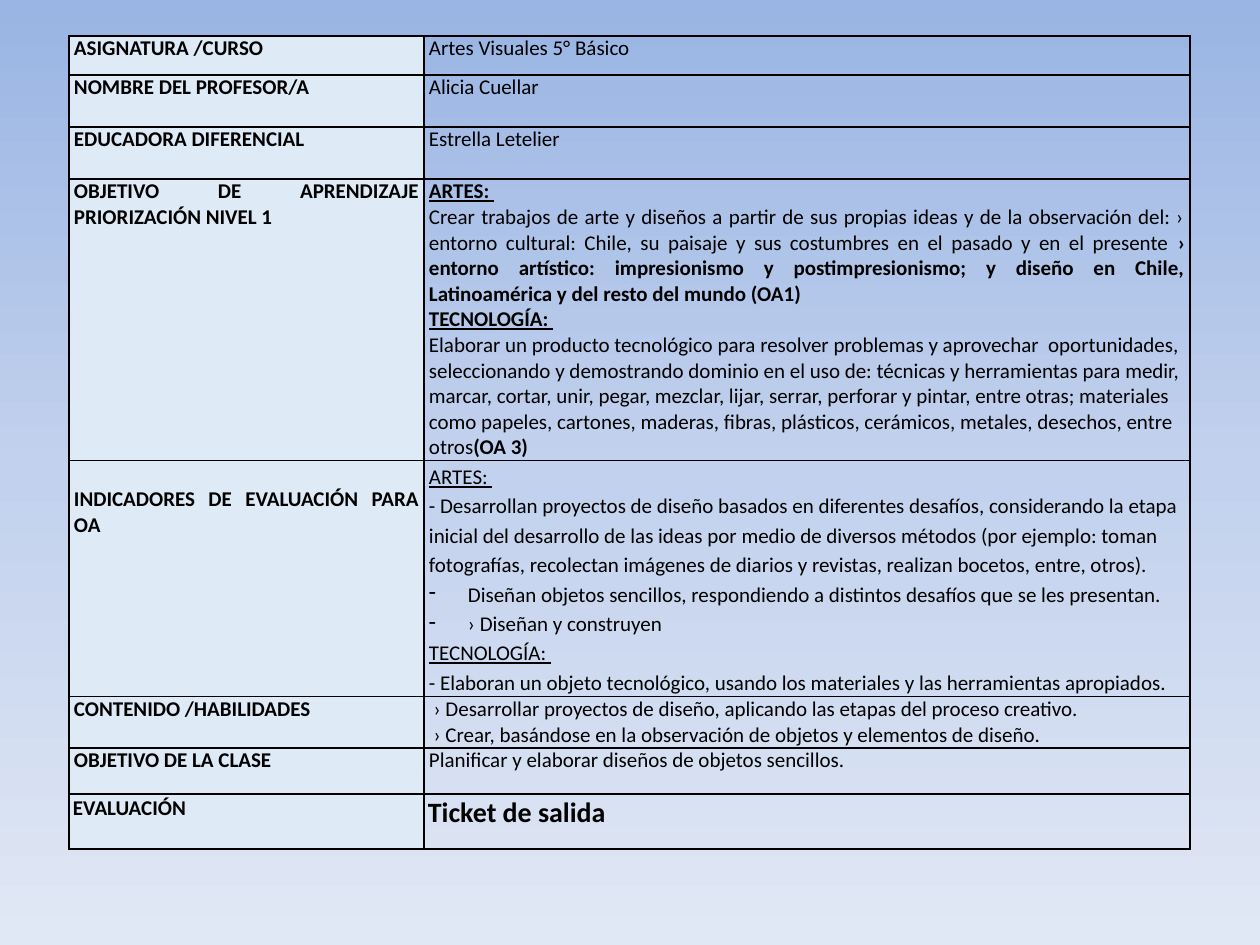
from copy import deepcopy

from lxml.etree import SubElement
from pptx import Presentation
from pptx.dml.color import RGBColor
from pptx.enum.text import PP_ALIGN as Align, MSO_ANCHOR as Anchor
from pptx.oxml import parse_xml
from pptx.oxml.ns import nsdecls, qn
from pptx.util import Pt

PX = 914400 // 126
COLORS = {"ink": "000000", "label": "DEEAF6",
          "sky top": "9AB5E4", "sky middle": "C2D1ED", "sky bottom": "E1E8F5"}
LINE = 26  # height of one text line, px


def add_para(frame, spans, size=12, align=Align.JUSTIFY, spacing=None, dash=False):
    """Add a paragraph of (text, style) spans; style holds b for bold, u for underline."""
    first = frame.paragraphs[0]
    para = frame.add_paragraph() if first.runs else first
    para.alignment = align
    if spacing:
        para.line_spacing = spacing
    if dash:
        props = para._p.get_or_add_pPr()
        props.set("marL", str(39 * PX))
        props.set("indent", str(-39 * PX))
        SubElement(props, qn("a:buChar")).set("char", "-")
    for text, style in spans:
        span = para.add_run()
        span.text = text
        span.font.name = "Calibri"
        span.font.size = Pt(size)
        span.font.bold = "b" in style
        span.font.underline = "u" in style
        span.font.color.rgb = RGBColor.from_string(COLORS["ink"])


def style_cell(cell, side, top):
    cell.margin_left = cell.margin_right = side * PX
    cell.margin_top, cell.margin_bottom = top * PX, 0
    cell.vertical_anchor = Anchor.TOP
    props = cell._tc.get_or_add_tcPr()
    for place, edge in enumerate("LRTB"):
        props.insert(place, parse_xml(
            f'<a:ln{edge} {nsdecls("a")} w="12700"><a:solidFill>'
            f'<a:srgbClr val="{COLORS["ink"]}"/></a:solidFill></a:ln{edge}>'))


LEFT = {"align": Align.LEFT}
LOOSE = {"align": Align.LEFT, "spacing": 1.15}
DASHED = {**LOOSE, "dash": True}

# Each row: label, height in px, paragraphs as (spans, format)
ROWS = [
    ("ASIGNATURA /CURSO", 39, [([("Artes Visuales 5° Básico", "")], {})]),
    ("NOMBRE DEL PROFESOR/A", 52, [([("Alicia Cuellar", "")], {})]),
    ("EDUCADORA DIFERENCIAL", 52, [([("Estrella Letelier", "")], {})]),
    ("OBJETIVO DE APRENDIZAJE PRIORIZACIÓN NIVEL 1", 281, [
        ([("ARTES: ", "bu")], {}),
        ([("Crear trabajos de arte y diseños a partir de sus propias ideas y de la "
           "observación del: › entorno cultural: Chile, su paisaje y sus costumbres "
           "en el pasado y en el presente ", ""),
          ("› entorno artístico: impresionismo y postimpresionismo; y diseño en "
           "Chile, Latinoamérica y del resto del mundo (OA1)", "b")], {}),
        ([("TECNOLOGÍA: ", "bu")], {}),
        ([("Elaborar un producto tecnológico para resolver problemas y aprovechar  "
           "oportunidades, seleccionando y demostrando dominio en el uso de: técnicas "
           "y herramientas para medir, marcar, cortar, unir, pegar, mezclar, lijar, "
           "serrar, perforar y pintar, entre otras; materiales como papeles, cartones, "
           "maderas, fibras, plásticos, cerámicos, metales, desechos, entre otros", ""),
          ("(OA 3)", "b")], LEFT),
    ]),
    ("INDICADORES DE EVALUACIÓN PARA OA", 236, [
        ([("ARTES: ", "u")], LOOSE),
        ([("- Desarrollan proyectos de diseño basados en diferentes desafíos, "
           "considerando la etapa inicial del desarrollo de las ideas por medio de "
           "diversos métodos (por ejemplo: toman fotografías, recolectan imágenes de "
           "diarios y revistas, realizan bocetos, entre, otros).", "")], LOOSE),
        ([("Diseñan objetos sencillos, respondiendo a distintos desafíos que se les "
           "presentan.", "")], DASHED),
        ([("› Diseñan y construyen", "")], DASHED),
        ([("TECNOLOGÍA: ", "u")], LOOSE),
        ([("- Elaboran un objeto tecnológico, usando los materiales y las "
           "herramientas apropiados.", "")], LOOSE),
    ]),
    ("CONTENIDO /HABILIDADES", 51, [
        ([(" › Desarrollar proyectos de diseño, aplicando las etapas del proceso "
           "creativo.", "")], {}),
        ([(" › Crear, basándose en la observación de objetos y elementos de "
           "diseño.", "")], {}),
    ]),
    ("OBJETIVO DE LA CLASE", 46,
     [([("Planificar y elaborar diseños de objetos sencillos.", "")], {})]),
    ("EVALUACIÓN", 55, [([("Ticket de salida", "b")], {"size": 16})]),
]
WIDTHS = (355, 766)

deck = Presentation()
deck.slide_width, deck.slide_height = 1260 * PX, 945 * PX
page = deck.slides.add_slide(deck.slide_layouts[6])

# Background: three-stop gradient from top to bottom
sky = page.background.fill
sky.gradient()
sky.gradient_angle = 270
stop_list = page.element.find(".//" + qn("a:gsLst"))
stop_list.append(deepcopy(stop_list[0]))
for stop, position, name in zip(sky.gradient_stops, (0, 0.5, 1),
                                ("sky top", "sky middle", "sky bottom")):
    stop.position = position
    stop.color.rgb = RGBColor.from_string(COLORS[name])

# Lesson plan table
height = sum(row[1] for row in ROWS)
table = page.shapes.add_table(len(ROWS), 2, 69 * PX, 36 * PX,
                              sum(WIDTHS) * PX, height * PX).table
table.first_row = table.horz_banding = False
for column, width in zip(table.columns, WIDTHS):
    column.width = width * PX

for index, (label, row_height, paras) in enumerate(ROWS):
    table.rows[index].height = row_height * PX
    label_cell, text_cell = table.cell(index, 0), table.cell(index, 1)
    side, top = (4, 2) if label == "EVALUACIÓN" else (5, 0)

    label_cell.fill.solid()
    label_cell.fill.fore_color.rgb = RGBColor.from_string(COLORS["label"])
    style_cell(label_cell, side, LINE if label.startswith("INDICADORES") else top)
    add_para(label_cell.text_frame, [(label, "b")])

    text_cell.fill.background()
    style_cell(text_cell, side, top)
    for spans, options in paras:
        add_para(text_cell.text_frame, spans, **options)

deck.save("out.pptx")
